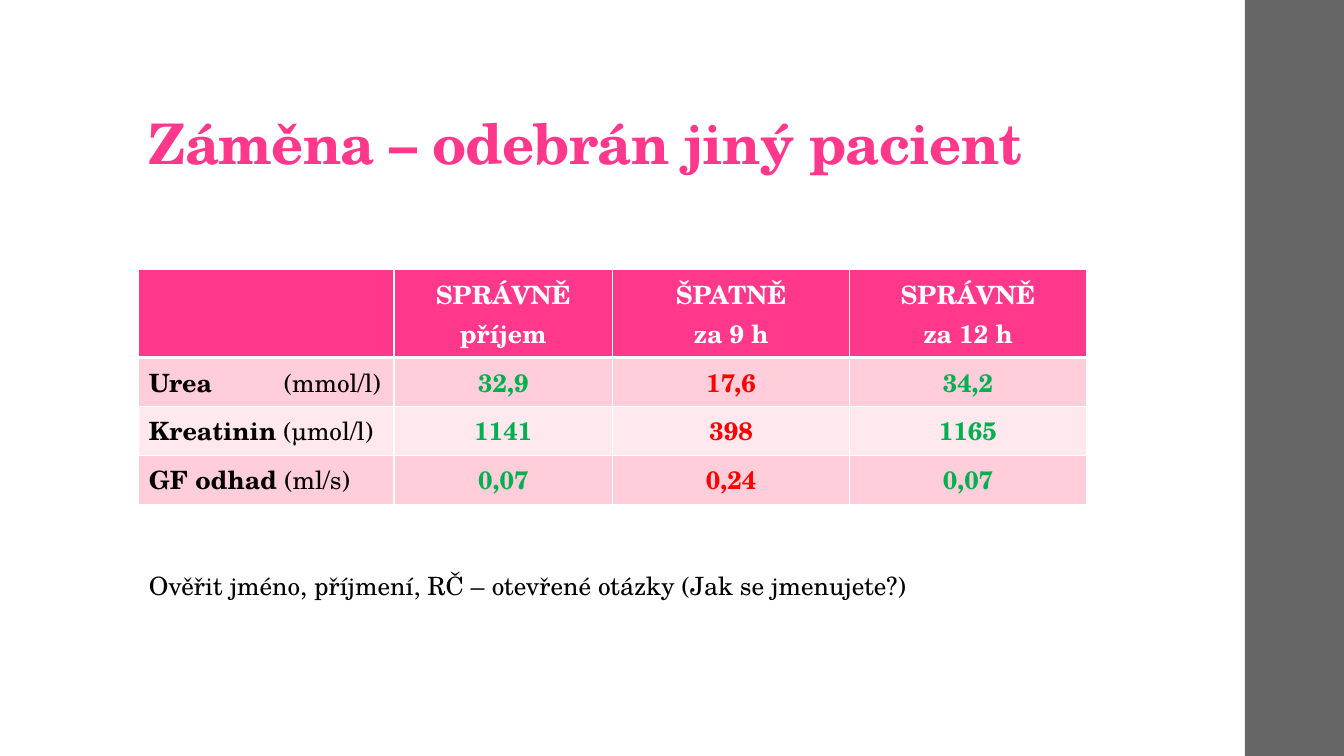
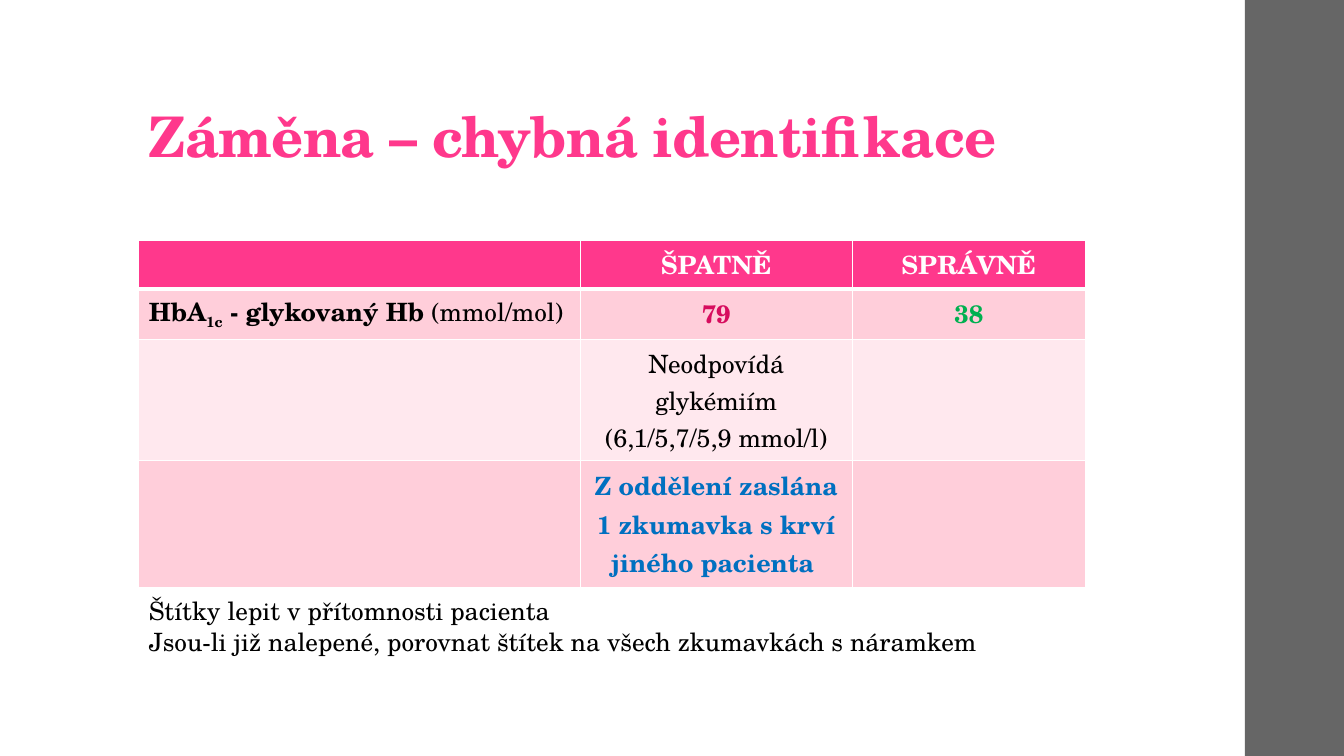
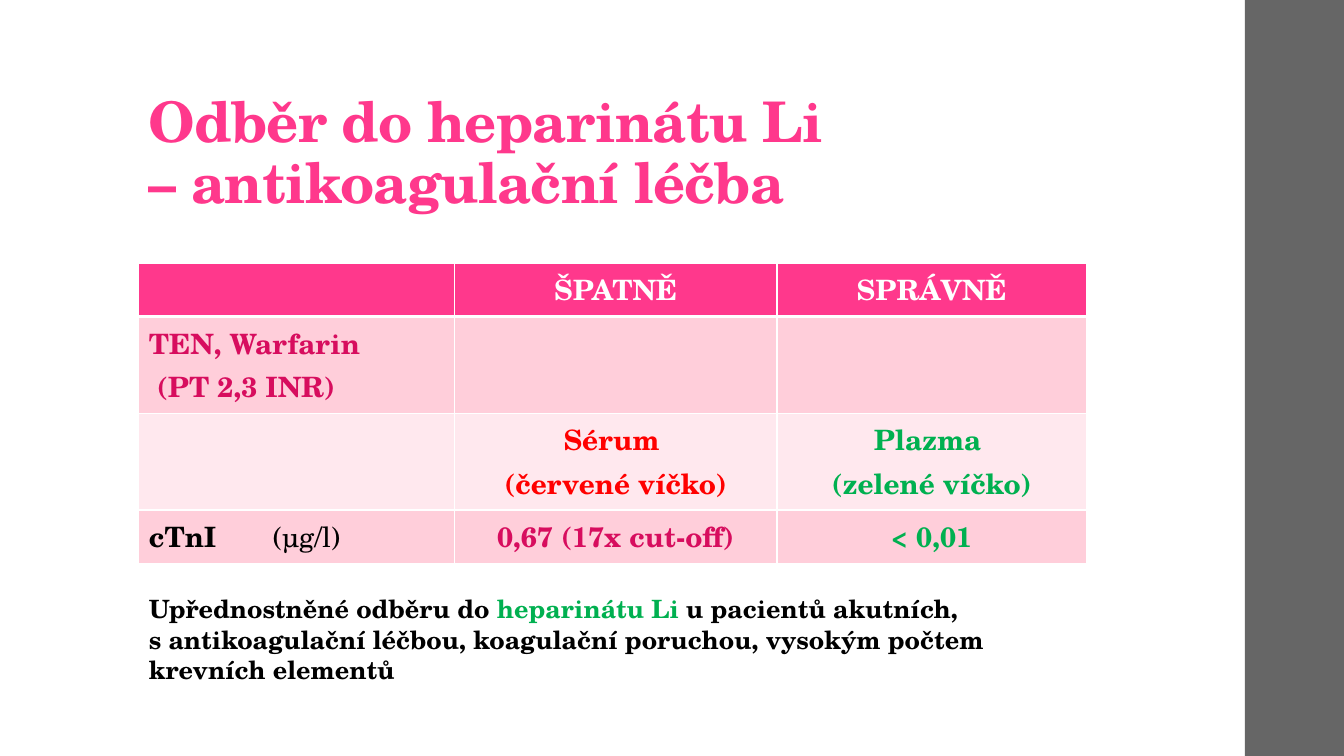
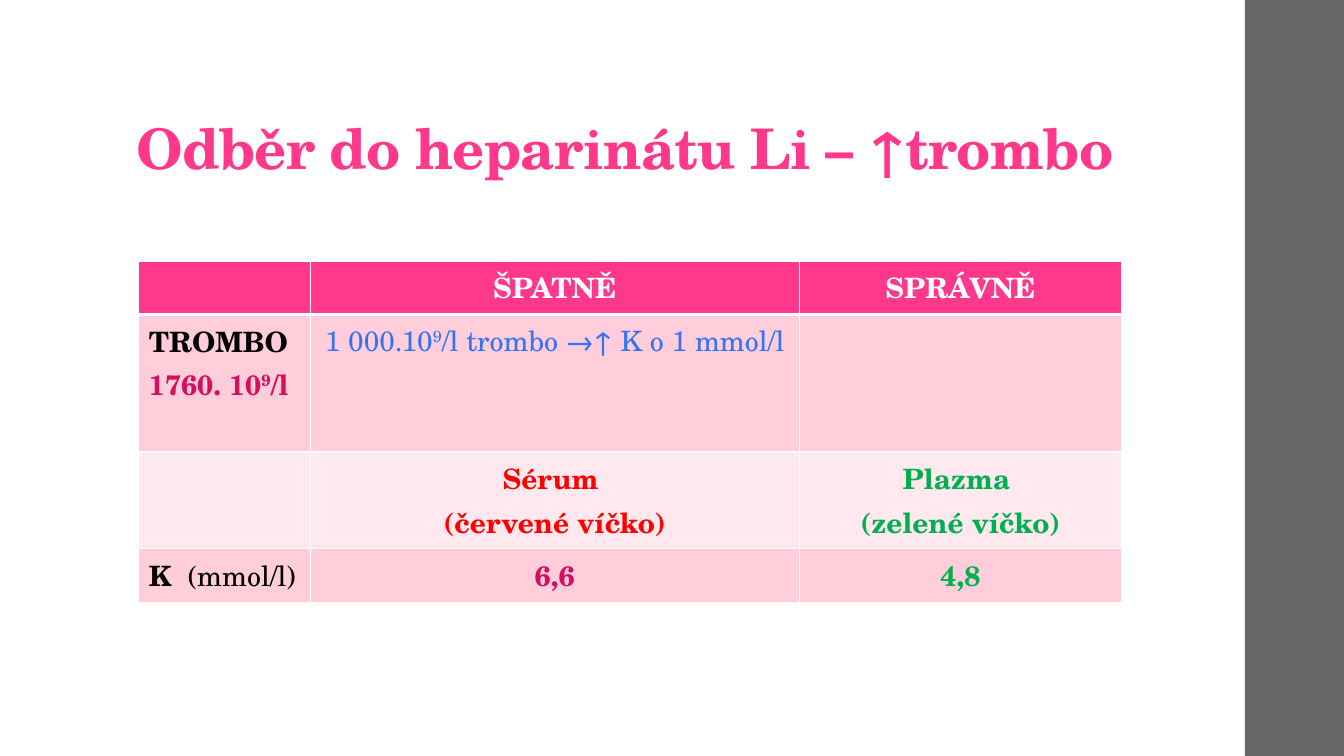
from dataclasses import dataclass

from lxml import etree
from pptx import Presentation
from pptx.dml.color import RGBColor
from pptx.enum import shapes, text
from pptx.oxml import ns
from pptx.util import Cm, Pt

FONT = "TeX Gyre Schola"
COLORS = {
    "pink": "FF388C", "rose": "FFCEDA", "blush": "FFE8EE", "band": "666666",
    "white": "FFFFFF", "black": "000000", "green": "00B050", "red": "FF0000",
    "crimson": "D70D5E", "blue": "0070C0", "sky": "3373F7",
}
LEFT = 3.5
SUB, SUPER = -25000, 30000
NOTE_SIZE, NOTE_PITCH = 18, 21.8


@dataclass
class Span:
    """A piece of text in one format; a newline in it breaks the line."""
    text: str
    color: str = "black"
    bold: bool = True
    baseline: int = 0


def plain(words):
    return Span(words, bold=False)


def rgb(name):
    return RGBColor.from_string(COLORS[name])


def format_run(run, size, span):
    run.font.name = FONT
    run.font.size = Pt(size)
    run.font.bold = span.bold
    run.font.color.rgb = rgb(span.color)
    if span.baseline:
        run.font._element.set("baseline", str(span.baseline))


def write(para, spans, size, pitch, align=text.PP_ALIGN.LEFT):
    para.alignment = align
    para.line_spacing = Pt(pitch)
    for span in spans:
        for number, line in enumerate(span.text.split("\n")):
            if number:
                para.add_line_break()
            if line:
                run = para.add_run()
                run.text = line
                format_run(run, size, span)


def set_tab(para, position):
    tabs = etree.SubElement(para._p.get_or_add_pPr(), ns.qn("a:tabLst"))
    etree.SubElement(tabs, ns.qn("a:tab"), pos=str(Cm(position)), algn="l")


def set_borders(cell, bottom):
    """White rules of 1 pt, with the bottom one as wide as given."""
    properties = cell._tc.get_or_add_tcPr()
    for index, (side, width) in enumerate(zip("LRTB", (1, 1, 1, bottom))):
        line = etree.Element(ns.qn("a:ln" + side), w=str(Pt(width)))
        fill = etree.SubElement(line, ns.qn("a:solidFill"))
        etree.SubElement(fill, ns.qn("a:srgbClr"), val=COLORS["white"])
        properties.insert(index, line)


def add_band(deck, page):
    """Draw the side band and hand it to the master, so every page has it."""
    left = Cm(31.37)
    band = page.shapes.add_shape(shapes.MSO_SHAPE.RECTANGLE, left, 0,
                                 deck.slide_width - left, deck.slide_height)
    band.shadow.inherit = False
    band.fill.solid()
    band.fill.fore_color.rgb = rgb("band")
    band.line.fill.background()
    deck.slide_master.element.cSld.spTree.insert(2, band.element)


def add_title(page, words, bottom, left=LEFT):
    height = 3.5
    box = page.shapes.title
    box.left, box.top = Cm(left), Cm(bottom - height)
    box.width, box.height = Cm(27), Cm(height)
    frame = box.text_frame
    frame.word_wrap = True
    frame.auto_size = text.MSO_AUTO_SIZE.NONE
    frame.vertical_anchor = text.MSO_ANCHOR.BOTTOM
    frame.margin_left = frame.margin_right = Cm(0.25)
    frame.margin_top, frame.margin_bottom = Cm(0.08), Cm(0.13)
    para = frame.paragraphs[0]
    write(para, [Span(words, "pink")], 40, 43.6)
    for run in para.runs:
        run.font._element.set("spc", "-50")


def add_results(page, top, widths, heights, rows, size, tab=None):
    """Table with a pink heading row; the first column is left aligned."""
    table = page.shapes.add_table(len(rows), len(widths), Cm(LEFT), Cm(top),
                                  Cm(sum(widths)), Cm(sum(heights))).table
    table.first_row = table.horz_banding = False
    for column, width in zip(table.columns, widths):
        column.width = Cm(width)
    for y, (row, height, spans_of_row) in enumerate(zip(table.rows, heights, rows)):
        row.height = Cm(height)
        fill = "pink" if y == 0 else ("blush", "rose")[y % 2]
        for x, (cell, spans) in enumerate(zip(row.cells, spans_of_row)):
            cell.fill.solid()
            cell.fill.fore_color.rgb = rgb(fill)
            set_borders(cell, 1 if y else 3)
            para = cell.text_frame.paragraphs[0]
            pitch = size * (1.54 if any(span.bold for span in spans) else 1.47)
            align = text.PP_ALIGN.CENTER if x else text.PP_ALIGN.LEFT
            write(para, spans, size, pitch, align)
            if tab and x == 0 and y:
                set_tab(para, tab)


def add_note(page, top, width, height, paragraphs):
    box = page.shapes.add_textbox(Cm(LEFT), Cm(top), Cm(width), Cm(height))
    frame = box.text_frame
    frame.word_wrap = True
    for number, spans in enumerate(paragraphs):
        para = frame.add_paragraph() if number else frame.paragraphs[0]
        write(para, spans, NOTE_SIZE, NOTE_PITCH)


def heading(*labels):
    return [[]] + [[Span(label, "white")] for label in labels]


def values(*pairs):
    return [[Span(words, color)] for words, color in pairs]


def fill_wrong_patient(page):
    def measured(label, *numbers):
        return [label] + values(*zip(numbers, ("green", "red", "green")))

    add_title(page, "Záměna – odebrán jiný pacient", 4.56)
    add_results(page, 6.8, [6.43, 5.51, 5.97, 5.97], [2.2, 1.23, 1.23, 1.23], [
        heading("SPRÁVNĚ\npříjem", "ŠPATNĚ\nza 9 h", "SPRÁVNĚ\nza 12 h"),
        measured([Span("Urea\t"), plain("(mmol/l)")], "32,9", "17,6", "34,2"),
        measured([Span("Kreatinin"), plain(" (µmol/l)")], "1141", "398", "1165"),
        measured([Span("GF odhad "), plain("(ml/s)")], "0,07", "0,24", "0,07"),
    ], 18, tab=3.4)
    add_note(page, 14.25, 22.12, 1.8, [
        [plain("Ověřit jméno, příjmení, RČ – otevřené otázky (Jak se jmenujete?)")],
    ])


def fill_wrong_label(page):
    add_title(page, "Záměna – chybná identifikace", 4.38)
    add_results(page, 6.05, [11.12, 6.86, 5.87], [1.24, 1.27, 3.05, 3.2], [
        heading("ŠPATNĚ", "SPRÁVNĚ"),
        [[Span("HbA"), Span("1c", baseline=SUB), Span(" - glykovaný Hb "),
          plain("(mmol/mol)")]] + values(("79", "crimson"), ("38", "green")),
        [[], [plain("Neodpovídá glykémiím (6,1/5,7/5,9 mmol/l)")], []],
        [[], [Span("Z oddělení zaslána\n1 zkumavka s krví jiného pacienta ",
                   "blue")], []],
    ], 18)
    add_note(page, 14.88, 23.88, 2.57, [
        [plain("Štítky lepit v přítomnosti pacienta")],
        [plain("Jsou-li již nalepené, porovnat štítek na všech zkumavkách "
               "s náramkem")],
    ])


def sample_row():
    return [[]] + values(("Sérum \n(červené víčko)", "red"),
                         ("Plazma \n(zelené víčko)", "green"))


def fill_anticoagulation(page):
    add_title(page, "Odběr do heparinátu Li \n– antikoagulační léčba", 5.55)
    add_results(page, 6.63, [7.95, 8.13, 7.8], [1.33, 2.44, 2.44, 1.34], [
        heading("ŠPATNĚ", "SPRÁVNĚ"),
        [[Span("TEN, Warfarin\n (PT 2,3 INR)", "crimson")], [], []],
        sample_row(),
        [[Span("cTnI\t"), plain("(µg/l)")]]
        + values(("0,67 (17x cut-off)", "crimson"), ("< 0,01", "green")),
    ], 20, tab=3.12)
    add_note(page, 14.83, 23.88, 3.33, [
        [Span("Upřednostněné odběru do "), Span("heparinátu Li ", "green"),
         Span("u pacientů akutních,\ns antikoagulační léčbou, koagulační "
              "poruchou, vysokým počtem krevních elementů")],
    ])


def fill_platelets(page):
    add_title(page, "Odběr do heparinátu Li – ↑trombo", 4.69, left=3.2)
    add_results(page, 6.58, [4.32, 12.32, 8.13], [1.33, 3.47, 2.43, 1.35], [
        heading("ŠPATNĚ", "SPRÁVNĚ"),
        [[Span("TROMBO \n"), Span("1760. 10", "crimson"),
          Span("9", "crimson", baseline=SUPER), Span("/l", "crimson")],
         [Span("1 000.10", "sky", False), Span("9", "sky", False, SUPER),
          Span("/l trombo →↑ K o 1 mmol/l", "sky", False)], []],
        sample_row(),
        [[Span("K\t"), plain("(mmol/l)")]]
        + values(("6,6", "crimson"), ("4,8", "green")),
    ], 20, tab=0.98)


def main():
    deck = Presentation()
    deck.slide_width, deck.slide_height = Cm(33.87), Cm(19.05)
    title_only = deck.slide_layouts[5]
    fillers = (fill_wrong_patient, fill_wrong_label,
               fill_anticoagulation, fill_platelets)
    for number, fill_page in enumerate(fillers):
        page = deck.slides.add_slide(title_only)
        if number == 0:
            add_band(deck, page)
        fill_page(page)
    deck.save("out.pptx")


if __name__ == "__main__":
    main()
